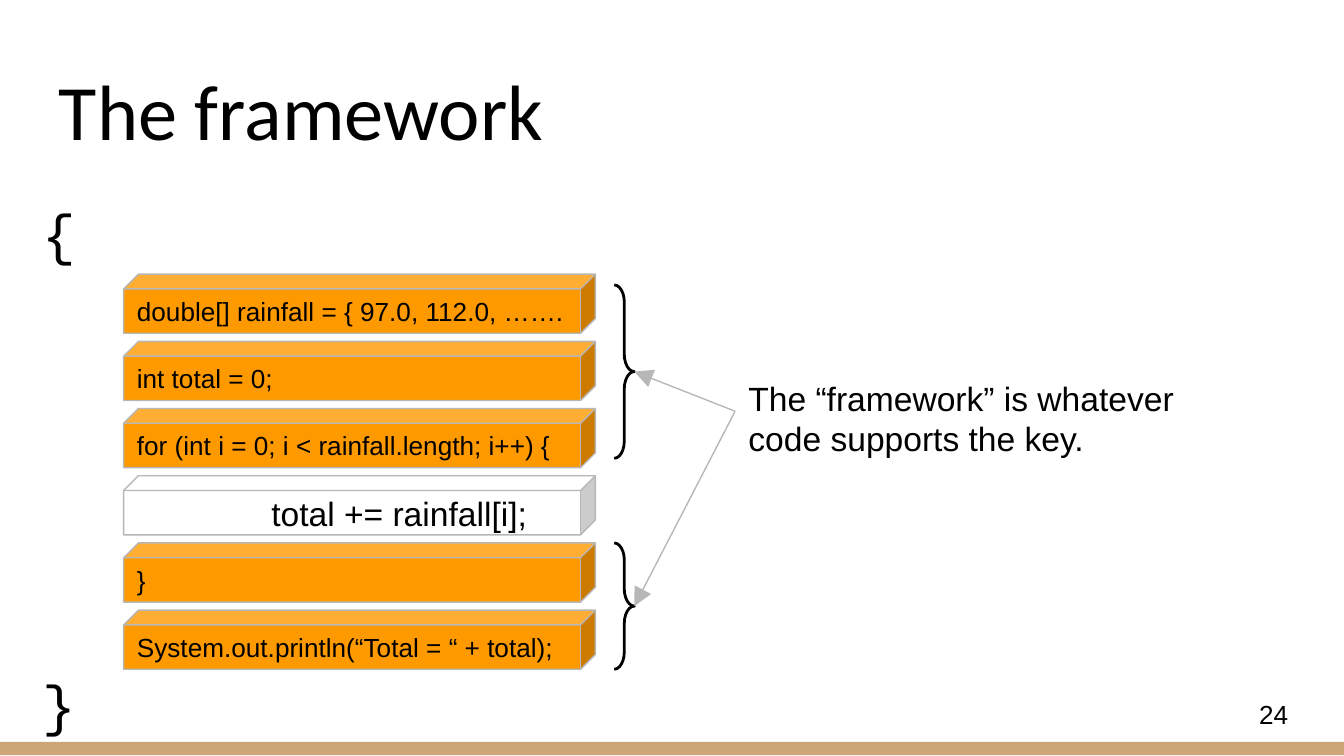
from lxml import etree
from pptx import Presentation
from pptx.dml.color import RGBColor
from pptx.enum.shapes import MSO_CONNECTOR, MSO_SHAPE
from pptx.enum.text import MSO_ANCHOR, PP_ALIGN
from pptx.oxml.ns import qn
from pptx.util import Inches, Pt

CUBE, BRACE, RECT = MSO_SHAPE.CUBE, MSO_SHAPE.RIGHT_BRACE, MSO_SHAPE.RECTANGLE
LINE = MSO_CONNECTOR.STRAIGHT
TOP, MIDDLE, BOTTOM = MSO_ANCHOR.TOP, MSO_ANCHOR.MIDDLE, MSO_ANCHOR.BOTTOM
LEFT = PP_ALIGN.LEFT
BLACK, GREY, ORANGE, WHITE, TAN = "000000", "B7B7B7", "FF9900", "FFFFFF", "CCA677"
ROWS = [
    ("double[] rainfall = { 97.0, 112.0, …….", 14, ORANGE),
    ("int total = 0;", 14, ORANGE),
    ("for (int i = 0; i < rainfall.length; i++) {", 14, ORANGE),
    ("\ttotal += rainfall[i];", 18, WHITE),
    ("}", 14, ORANGE),
    ("System.out.println(“Total = “ + total);", 14, ORANGE),
]


def color(text):
    """Turn a hex string into a colour."""
    return RGBColor.from_string(text)


def write(shape, text, size, font="Arial", anchor=TOP):
    """Put one left-aligned run of text in a shape."""
    frame = shape.text_frame
    frame.word_wrap = True
    frame.vertical_anchor = anchor
    frame.margin_left = frame.margin_right = Inches(0.1)
    frame.margin_top = frame.margin_bottom = Inches(0.1)
    para = frame.paragraphs[0]
    para.alignment = LEFT
    if "\t" in text:
        stops = etree.SubElement(para._p.get_or_add_pPr(), qn("a:tabLst"))
        etree.SubElement(stops, qn("a:tab"), pos=str(Inches(1)), algn="l")
    run = para.add_run()
    run.text = text
    run.font.size = Pt(size)
    run.font.name = font
    run.font.color.rgb = color(BLACK)


def label(slide, box, text, size, font="Arial", anchor=TOP):
    """Add a text box."""
    shape = slide.shapes.add_textbox(*map(Inches, box))
    write(shape, text, size, font, anchor)
    return shape


def block(slide, kind, box, fill=None, line=None, width=0.75):
    """Add a flat preset shape."""
    shape = slide.shapes.add_shape(kind, *map(Inches, box))
    shape.shadow.inherit = False
    if fill:
        shape.fill.solid()
        shape.fill.fore_color.rgb = color(fill)
    else:
        shape.fill.background()
    if line:
        shape.line.color.rgb = color(line)
        shape.line.width = Pt(width)
    else:
        shape.line.fill.background()
    return shape


def arrow(slide, source, end):
    """Draw an arrow from the left side of a shape to a point."""
    x, y = map(Inches, end)
    link = slide.shapes.add_connector(LINE, source.left, source.top, x, y)
    link.begin_connect(source, 1)
    link.line.color.rgb = color(GREY)
    link.line.width = Pt(0.75)
    edge = link.line._get_or_add_ln()
    etree.SubElement(edge, qn("a:tailEnd"), type="triangle", w="lg", len="lg")
    etree.SubElement(link._element.spPr, qn("a:effectLst"))


def code(slide, x, y, wide, step):
    """Stack the code lines as cubes at an equal step."""
    for i, (text, size, fill) in enumerate(ROWS):
        cube = block(slide, CUBE, (x, y + i * step, wide, 0.44), fill, GREY)
        cube.adjustments[0] = 0.25
        write(cube, text, size, anchor=MIDDLE)


def brace(slide, x, y, wide, high):
    """Add a right brace and return its tip."""
    shape = block(slide, BRACE, (x, y, wide, high), line=BLACK, width=1.5)
    shape.adjustments[0] = 0.85
    shape.adjustments[1] = 0.5
    return x + wide, y + high / 2


def notes(slide, x, y):
    """Add the braces, the remark and the arrows that join them."""
    tips = [brace(slide, x, y, 0.15, 1.29), brace(slide, x, y + 1.92, 0.15, 0.94)]
    text = "The “framework” is whatever code supports the key."
    note = label(slide, (x + 0.9, y + 0.59, 3.92, 0.7), text, 18)
    for tip in tips:
        arrow(slide, note, tip)


def main():
    """Build and save the slide."""
    deck = Presentation()
    deck.slide_width = Inches(10)
    deck.slide_height = deck.slide_width * 9 // 16
    slide = deck.slides.add_slide(deck.slide_layouts[6])
    block(slide, RECT, (0, 5.52, 10, 0.1), TAN)
    label(slide, (0.34, 0.35, 9.32, 0.91), "The framework", 42, "Calibri", BOTTOM)
    for sign, y in (("{", 1.38), ("}", 4.88)):
        label(slide, (0.22, y, 0.35, 0.59), sign, 30, "Courier New")
    code(slide, 0.92, 2.04, 3.51, 0.5)
    notes(slide, 4.57, 2.12)
    label(slide, (9.27, 5.1, 0.6, 0.43), "24", 14, anchor=MIDDLE)
    deck.save("out.pptx")


if __name__ == "__main__":
    main()
